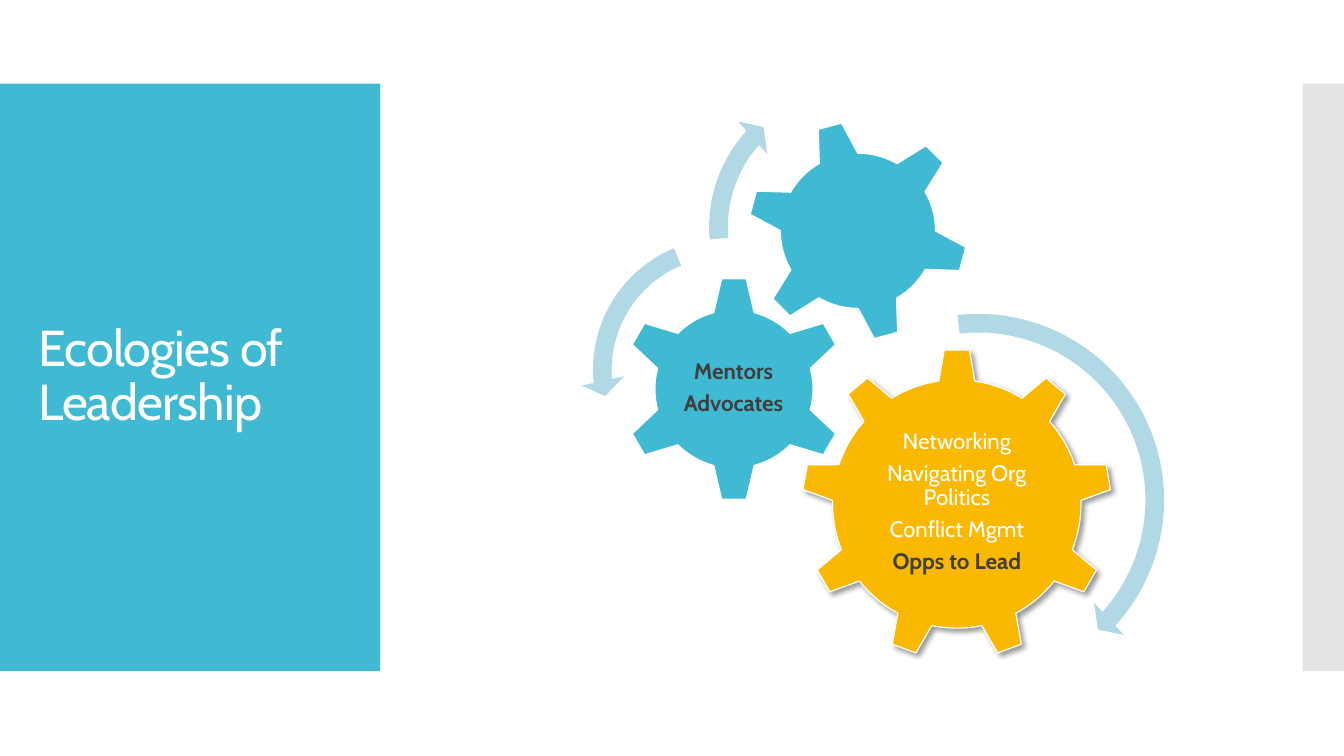
"""Build the Ecologies of Leadership slide with its three gears."""
import lxml.etree
import pptx
import pptx.dml.color
import pptx.enum.shapes
import pptx.enum.text
import pptx.oxml.ns
import pptx.util

Inches = pptx.util.Inches
Pt = pptx.util.Pt
SHAPE = pptx.enum.shapes.MSO_SHAPE
ALIGN = pptx.enum.text.PP_ALIGN
qn = pptx.oxml.ns.qn

COLORS = {
    "teal": "40BAD2",
    "gold": "FAB900",
    "arrow": "B0D9E5",
    "gray": "C8C8C8",
    "white": "FFFFFF",
    "dark": "3F3F3F",
    "black": "000000",
}


class SlideBuilder:
    """Hold the style and the slide being drawn."""

    font = "Cabin"

    def __init__(self, slide):
        self.slide = slide

    def color(self, name):
        return pptx.dml.color.RGBColor.from_string(COLORS[name])

    def shape(self, kind, left, top, width, height, fill):
        sp = self.slide.shapes.add_shape(
            kind, Inches(left), Inches(top), Inches(width), Inches(height))
        sp.shadow.inherit = False
        sp.fill.solid()
        sp.fill.fore_color.rgb = self.color(fill)
        sp.line.fill.background()
        return sp

    def panel(self, left, width, fill, opacity=100):
        sp = self.shape(SHAPE.RECTANGLE, left, 0.83, width, 5.83, fill)
        if opacity < 100:
            clr = sp._element.spPr.find(qn("a:solidFill"))[0]
            lxml.etree.SubElement(clr, qn("a:alpha"), val=str(opacity * 1000))

    def gear(self, kind, left, top, size, fill, rotation=0):
        sp = self.shape(kind, left, top, size, size, fill)
        sp.line.color.rgb = self.color("white")
        sp.line.width = Pt(0.85)
        sp.rotation = rotation
        return sp

    def drop_shadow(self, sp):
        effects = sp._element.spPr.find(qn("a:effectLst"))
        shadow = lxml.etree.SubElement(
            effects, qn("a:outerShdw"), blurRad=str(Pt(4)), dist=str(Pt(3)),
            dir=str(45 * 60000), algn="tl", rotWithShape="0")
        clr = lxml.etree.SubElement(shadow, qn("a:srgbClr"), val=COLORS["black"])
        lxml.etree.SubElement(clr, qn("a:alpha"), val="40000")

    def arrow(self, kind, left, top, size, adjustments):
        sp = self.shape(kind, left, top, size, size, "arrow")
        for i, value in enumerate(adjustments):
            sp.adjustments[i] = value

    def text(self, left, top, width, height, lines, size, align, inset=None,
             space_after=0, spacing=0):
        sp = self.slide.shapes.add_textbox(
            Inches(left), Inches(top), Inches(width), Inches(height))
        tf = sp.text_frame
        tf.word_wrap = True
        tf.vertical_anchor = pptx.enum.text.MSO_ANCHOR.MIDDLE
        if inset is not None:
            tf.margin_left = tf.margin_right = Inches(inset)
            tf.margin_top = tf.margin_bottom = Inches(inset)
        for i, (words, color, bold) in enumerate(lines):
            p = tf.add_paragraph() if i else tf.paragraphs[0]
            p.alignment = align
            p.line_spacing = 0.9
            p.space_after = Pt(space_after)
            r = p.add_run()
            r.text = words
            r.font.name = self.font
            r.font.size = Pt(size)
            r.font.bold = bold
            r.font.color.rgb = self.color(color)
            if spacing:
                r._r.get_or_add_rPr().set("spc", str(round(spacing * 100)))

    def gear_text(self, left, top, width, height, lines):
        self.text(left, top, width, height, lines, 16, ALIGN.CENTER,
                  inset=0.02, space_after=5.6)


def main():
    prs = pptx.Presentation()
    prs.slide_width = Inches(13.33)
    prs.slide_height = Inches(7.5)
    s = SlideBuilder(prs.slides.add_slide(prs.slide_layouts[6]))

    s.panel(0, 3.77, "teal")
    s.panel(12.92, 0.41, "gray", opacity=50)
    s.text(0.28, 1.23, 3.22, 5.03, [("Ecologies of Leadership", "white", False)],
           36, ALIGN.LEFT, spacing=-0.6)

    s.drop_shadow(s.gear(SHAPE.GEAR_9, 7.95, 3.46, 3.08, "gold"))
    s.gear_text(8.57, 4.19, 1.84, 1.58, [
        ("Networking", "white", False),
        ("Navigating Org Politics", "white", False),
        ("Conflict Mgmt", "white", False),
        ("Opps to Lead", "dark", True),
    ])
    s.gear(SHAPE.GEAR_6, 6.16, 2.74, 2.24, "teal")
    s.gear_text(6.72, 3.3, 1.11, 1.11, [
        ("Mentors", "dark", True),
        ("Advocates", "dark", True),
    ])
    s.gear(SHAPE.GEAR_6, 7.41, 1.19, 2.2, "teal", rotation=345)

    s.arrow(SHAPE.CIRCULAR_ARROW, 7.73, 2.99, 3.94,
            (0.047, 2.99, 25.346, 158.221, 0.055))
    s.arrow(SHAPE.LEFT_CIRCULAR_ARROW, 5.76, 2.24, 2.86,
            (0.065, 4.3, 104.891, 148.378, 0.075))
    s.arrow(SHAPE.CIRCULAR_ARROW, 6.91, 0.71, 3.09,
            (0.06, 3.941, 133.138, 105.082, 0.07))

    prs.save("out.pptx")


if __name__ == "__main__":
    main()
